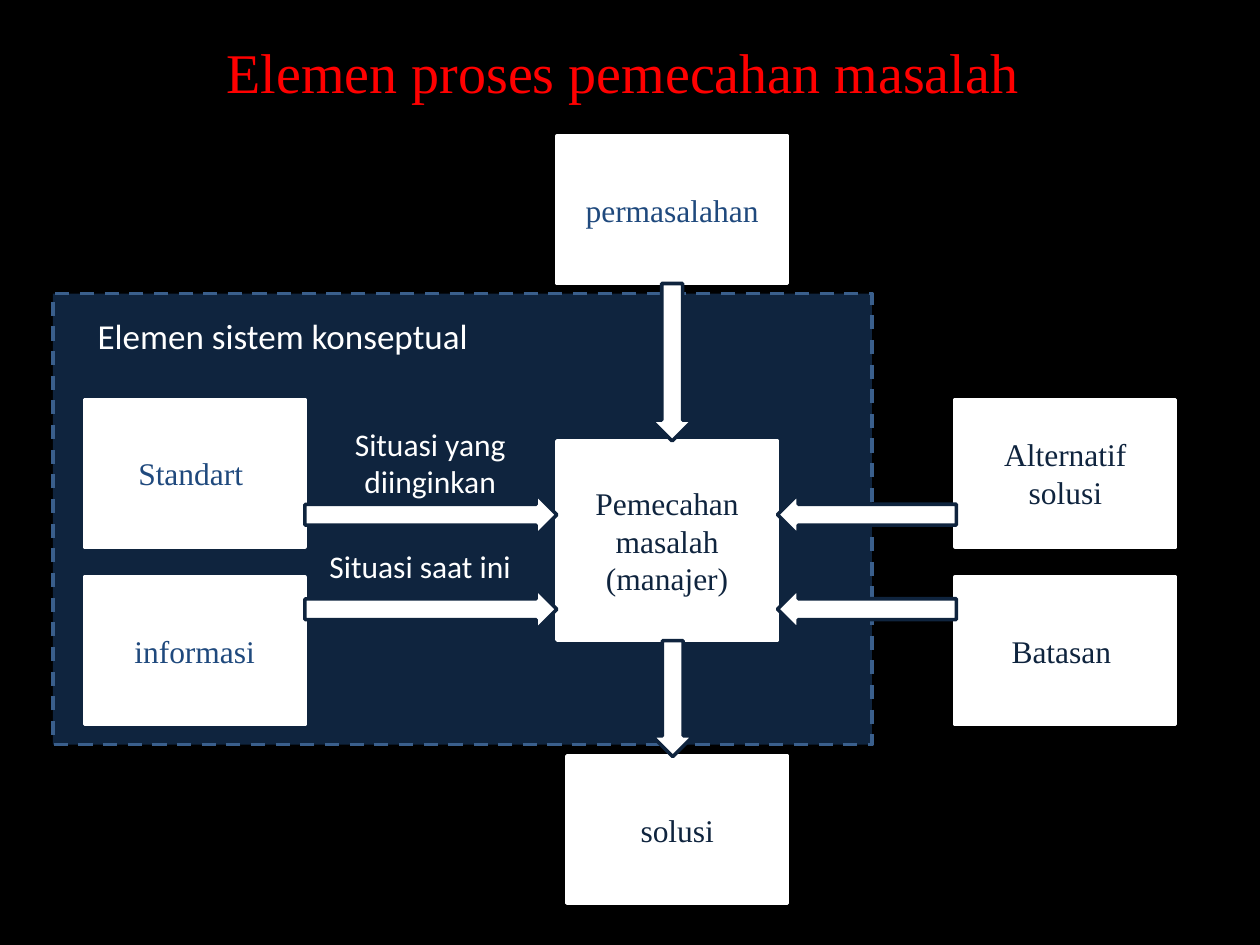
from typing import NamedTuple

from pptx import Presentation, util as u
from pptx.dml.color import RGBColor
from pptx.enum import dml, shapes, text
from pptx.oxml.ns import qn

BLACK, WHITE, RED = "000000", "FFFFFF", "FF0000"
NAVY, BLUE, EDGE = "0F243E", "1F497D", "3A5F8C"
SERIF, SANS = "Times New Roman", "Calibri"
KIND = shapes.MSO_SHAPE


class Box(NamedTuple):
    words: str
    left: float
    top: float
    width: float = 1.75
    height: float = 1.17
    color: str = NAVY


class Label(NamedTuple):
    words: str
    left: float
    top: float
    width: float
    height: float
    size: int = 18


class Arrow(NamedTuple):
    left: float
    top: float
    length: float
    turn: int = 0


def rgb(code: str) -> RGBColor:
    return RGBColor.from_string(code)


def write(frame, words: str, *, size: int = 18, font: str = SERIF,
          color: str = NAVY) -> None:
    para = frame.paragraphs[0]
    para.alignment = text.PP_ALIGN.CENTER
    run = para.add_run()
    run.text = words
    run.font.size = u.Pt(size)
    run.font.name = font
    run.font.color.rgb = rgb(color)


def draw(slide, kind, left: float, top: float, width: float, height: float,
         fill: str, line: str):
    shape = slide.shapes.add_shape(
        kind, *(u.Inches(n) for n in (left, top, width, height)))
    shape.shadow.inherit = False
    shape.fill.solid()
    shape.fill.fore_color.rgb = rgb(fill)
    shape.line.color.rgb = rgb(line)
    shape.line.width = u.Pt(2)
    shape.text_frame.word_wrap = True
    shape.text_frame.vertical_anchor = text.MSO_ANCHOR.MIDDLE
    return shape


def draw_box(slide, box: Box) -> None:
    shape = draw(slide, KIND.RECTANGLE, box.left, box.top, box.width,
                 box.height, WHITE, WHITE)
    write(shape.text_frame, box.words, color=box.color)


def draw_label(slide, label: Label) -> None:
    shape = draw(slide, KIND.RECTANGLE, label.left, label.top, label.width,
                 label.height, NAVY, NAVY)
    write(shape.text_frame, label.words, size=label.size, font=SANS,
          color=WHITE)


def draw_arrow(slide, arrow: Arrow) -> None:
    shape = draw(slide, KIND.LEFT_ARROW, arrow.left, arrow.top, arrow.length,
                 0.33, WHITE, NAVY)
    shape.rotation = arrow.turn


# Shared columns and rows
LEFT, MID, RIGHT = 0.67, 4.42, 7.58
HIGH, LOW = 3.17, 4.58
ROWS = (4.67, 3.92)

BOXES = [
    Box("Pemecahan masalah (manajer)", MID, 3.5, height=1.58),
    Box("Alternatif solusi", RIGHT, HIGH),
    Box("informasi", LEFT, LOW, color=BLUE),
    Box("Standart ", LEFT, HIGH, color=BLUE),
    Box("solusi", 4.5, 6),
    Box("permasalahan", MID, 1.08, width=1.83, color=BLUE),
    Box("Batasan ", RIGHT, LOW),
]
ARROWS = [
    Arrow(4.71, 2.71, 1.25, 270),
    *(Arrow(6.17, row, 1.42) for row in ROWS),
    *(Arrow(2.42, row, 2, 180) for row in ROWS),
    Arrow(4.88, 5.38, 0.92, 270),
]
LABELS = [
    Label("Situasi yang diinginkan", 2.5, 3.42, 1.83, 0.5),
    Label("Elemen sistem konseptual", 0.58, 2.5, 3.33, 0.33, size=20),
    Label("Situasi saat ini", 2.5, 4.33, 1.67, 0.33),
]


def main() -> None:
    deck = Presentation()
    deck.slide_width, deck.slide_height = u.Inches(10), u.Inches(7.5)
    slide = deck.slides.add_slide(deck.slide_layouts[1])
    slide.background.fill.solid()
    slide.background.fill.fore_color.rgb = rgb(BLACK)

    # Heading in the body placeholder; the title one is unused
    title = slide.shapes.title.element
    title.getparent().remove(title)
    body = slide.placeholders[1]
    body.left, body.top = u.Inches(0.5), u.Inches(0.25)
    body.width, body.height = u.Inches(9), u.Inches(7)
    write(body.text_frame, "Elemen proses pemecahan masalah ", size=32,
          color=RED)
    props = body.text_frame.paragraphs[0]._p.get_or_add_pPr()
    props.append(props.makeelement(qn("a:buNone"), {}))

    # Dashed frame of the conceptual system
    frame = draw(slide, KIND.RECTANGLE, 0.42, 2.33, 6.5, 3.58, NAVY, EDGE)
    frame.line.dash_style = dml.MSO_LINE.DASH

    # Boxes, arrows and labels, back to front
    for box in BOXES:
        draw_box(slide, box)
    for arrow in ARROWS:
        draw_arrow(slide, arrow)
    for label in LABELS:
        draw_label(slide, label)

    deck.save("out.pptx")


if __name__ == "__main__":
    main()
